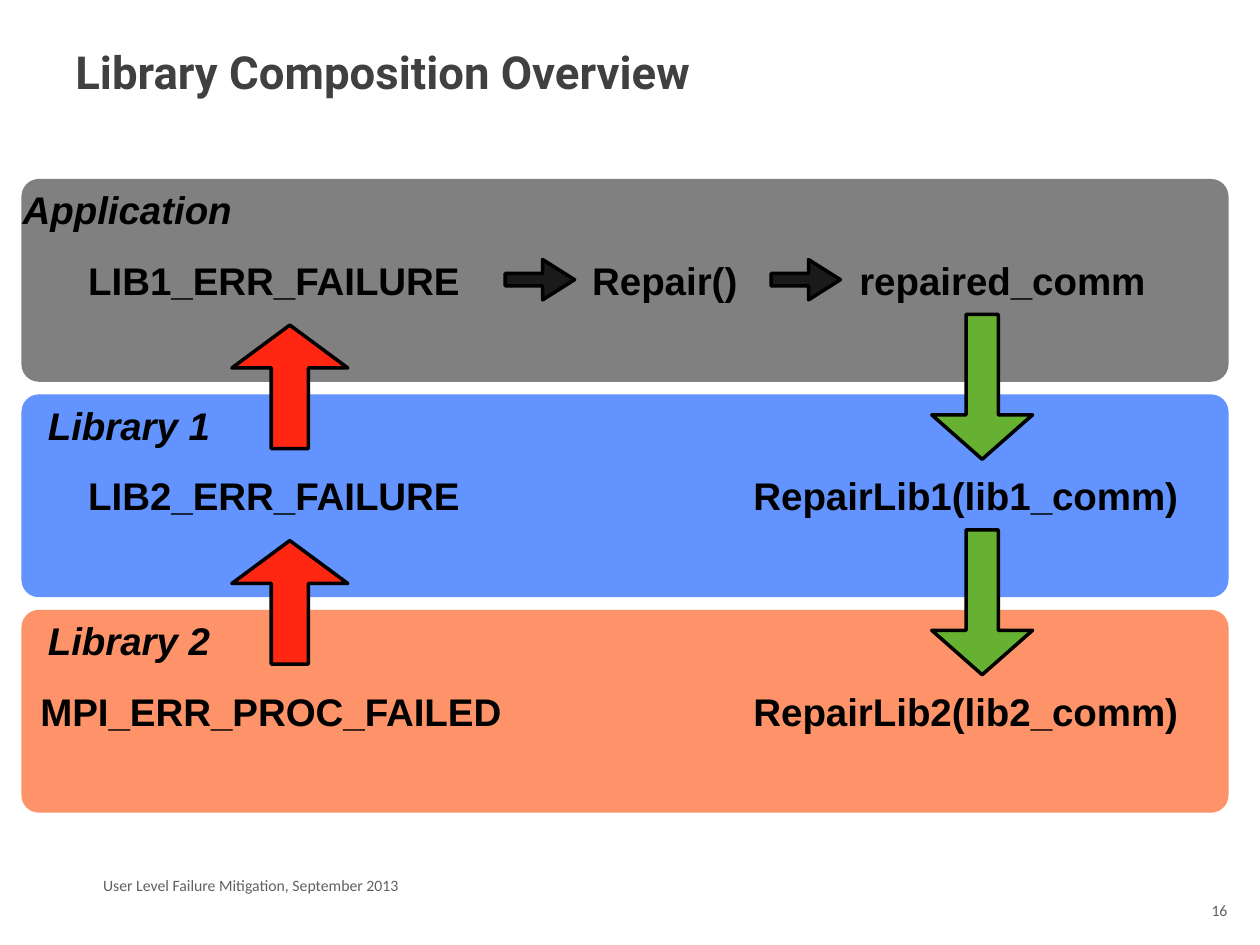
from dataclasses import dataclass

import pptx
import pptx.dml.color
import pptx.enum.shapes
import pptx.enum.text
import pptx.util

Inches = pptx.util.Inches
SHAPES = pptx.enum.shapes.MSO_SHAPE
ANCHOR = pptx.enum.text.MSO_ANCHOR
ALIGN = pptx.enum.text.PP_ALIGN

COLOURS = {
    "title": "404040",
    "footer": "616161",
    "ink": "000000",
    "application": "808080",
    "library1": "6293FE",
    "library2": "FE936A",
    "error": "FF2712",
    "repair": "66B132",
    "step": "1A1A1A",
}
LAYER_TOP = 1.42
LAYER_PITCH = 1.71


@dataclass(frozen=True)
class Label:
    text: str
    left: float
    width: float


@dataclass(frozen=True)
class Layer:
    colour: str
    name: Label
    calls: tuple[Label, ...]


@dataclass(frozen=True)
class Arrow:
    colour: str
    left: float
    top: float
    width: float
    height: float
    shaft: float
    head: float
    rotation: int = 0


LAYERS = (
    Layer("application", Label("Application", 0.18, 1.82), (
        Label("LIB1_ERR_FAILURE", 0.7, 3.18),
        Label("Repair()", 4.7, 1.29),
        Label("repaired_comm", 6.82, 2.47),
    )),
    Layer("library1", Label("Library 1", 0.38, 1.43), (
        Label("LIB2_ERR_FAILURE", 0.7, 3.18),
        Label("RepairLib1(lib1_comm)", 5.98, 3.63),
    )),
    Layer("library2", Label("Library 2", 0.38, 1.43), (
        Label("MPI_ERR_PROC_FAILED", 0.32, 3.93),
        Label("RepairLib2(lib2_comm)", 5.98, 3.63),
    )),
)
STEP_ARROWS = tuple(
    Arrow("step", left, 2.06, 0.55, 0.32, 0.31, 0.79) for left in (4.01, 6.12)
)
LAYER_ARROWS = tuple(
    arrow
    for offset in (0, LAYER_PITCH)
    for arrow in (
        Arrow("error", 1.81, 2.61 + offset, 0.98, 0.92, 0.32, 0.37, 270),
        Arrow("repair", 7.22, 2.67 + offset, 1.15, 0.8, 0.32, 0.44, 90),
    )
)


def rgb(colour: str) -> pptx.dml.color.RGBColor:
    return pptx.dml.color.RGBColor.from_string(COLOURS[colour])


def add_text(slide, text: str, left: float, top: float, width: float, height: float, *,
             size: int = 22, font: str = "Arial", colour: str = "ink",
             bold: bool = True, italic: bool = False, inset: bool = False,
             anchor=ANCHOR.MIDDLE, align=ALIGN.LEFT) -> None:
    box = slide.shapes.add_textbox(Inches(left), Inches(top), Inches(width), Inches(height))
    frame = box.text_frame
    frame.word_wrap = True
    frame.vertical_anchor = anchor
    if not inset:
        frame.margin_left = frame.margin_right = Inches(0)
        frame.margin_top = frame.margin_bottom = Inches(0)
    paragraph = frame.paragraphs[0]
    paragraph.alignment = align
    run = paragraph.add_run()
    run.text = text
    run.font.name = font
    run.font.size = pptx.util.Pt(size)
    run.font.bold = bold
    run.font.italic = italic
    run.font.color.rgb = rgb(colour)


def add_filled(slide, preset, colour: str, left: float, top: float,
               width: float, height: float, adjustments: tuple[float, ...]):
    shape = slide.shapes.add_shape(
        preset, Inches(left), Inches(top), Inches(width), Inches(height))
    shape.shadow.inherit = False
    shape.fill.solid()
    shape.fill.fore_color.rgb = rgb(colour)
    for index, value in enumerate(adjustments):
        shape.adjustments[index] = value
    return shape


def draw_layer(slide, layer: Layer, top: float) -> None:
    band = add_filled(slide, SHAPES.ROUNDED_RECTANGLE, layer.colour,
                      0.17, top, 9.58, 1.61, (0.086,))
    band.line.fill.background()
    name = layer.name
    add_text(slide, name.text, name.left, top + 0.03, name.width, 0.42, italic=True)
    for call in layer.calls:
        add_text(slide, call.text, call.left, top + 0.59, call.width, 0.42)


def draw_arrow(slide, arrow: Arrow) -> None:
    shape = add_filled(slide, SHAPES.RIGHT_ARROW, arrow.colour, arrow.left, arrow.top,
                       arrow.width, arrow.height, (arrow.shaft, arrow.head))
    shape.rotation = arrow.rotation
    shape.line.color.rgb = rgb("ink")
    shape.line.width = pptx.util.Pt(2)


def main() -> None:
    deck = pptx.Presentation()
    deck.slide_width = Inches(10)
    deck.slide_height = Inches(7.5)
    slide = deck.slides.add_slide(deck.slide_layouts[6])

    add_text(slide, "Library Composition Overview", 0.5, 0.3, 9, 1.25, size=26,
             font="Roboto", colour="title", inset=True, anchor=ANCHOR.TOP)
    footer = dict(size=9, font="Calibri", colour="footer", bold=False,
                  inset=True, anchor=ANCHOR.TOP)
    add_text(slide, "User Level Failure Mitigation, September 2013",
             0.72, 6.9, 6.5, 0.25, **footer)
    add_text(slide, "16", 9.42, 7.1, 0.42, 0.4, align=ALIGN.RIGHT, **footer)

    for row, layer in enumerate(LAYERS):
        draw_layer(slide, layer, LAYER_TOP + row * LAYER_PITCH)
    for arrow in LAYER_ARROWS + STEP_ARROWS:
        draw_arrow(slide, arrow)

    deck.save("out.pptx")


if __name__ == "__main__":
    main()
